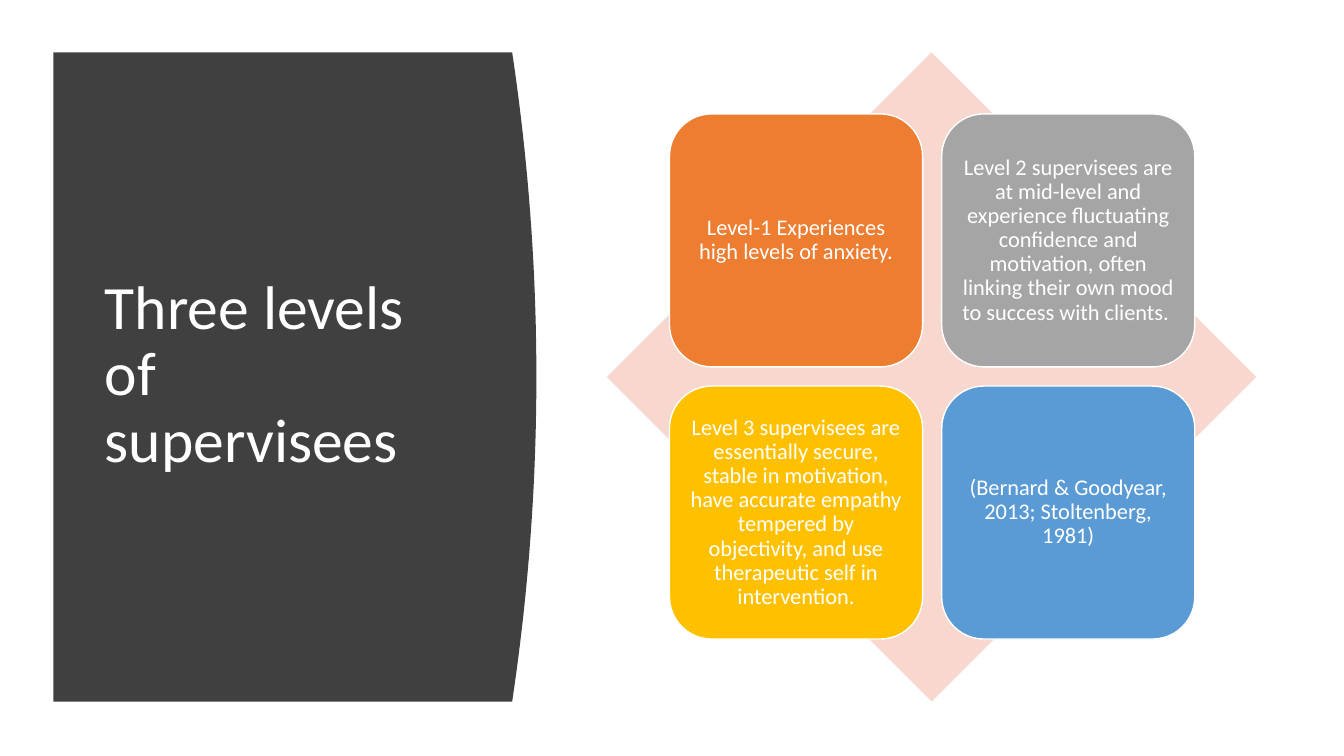
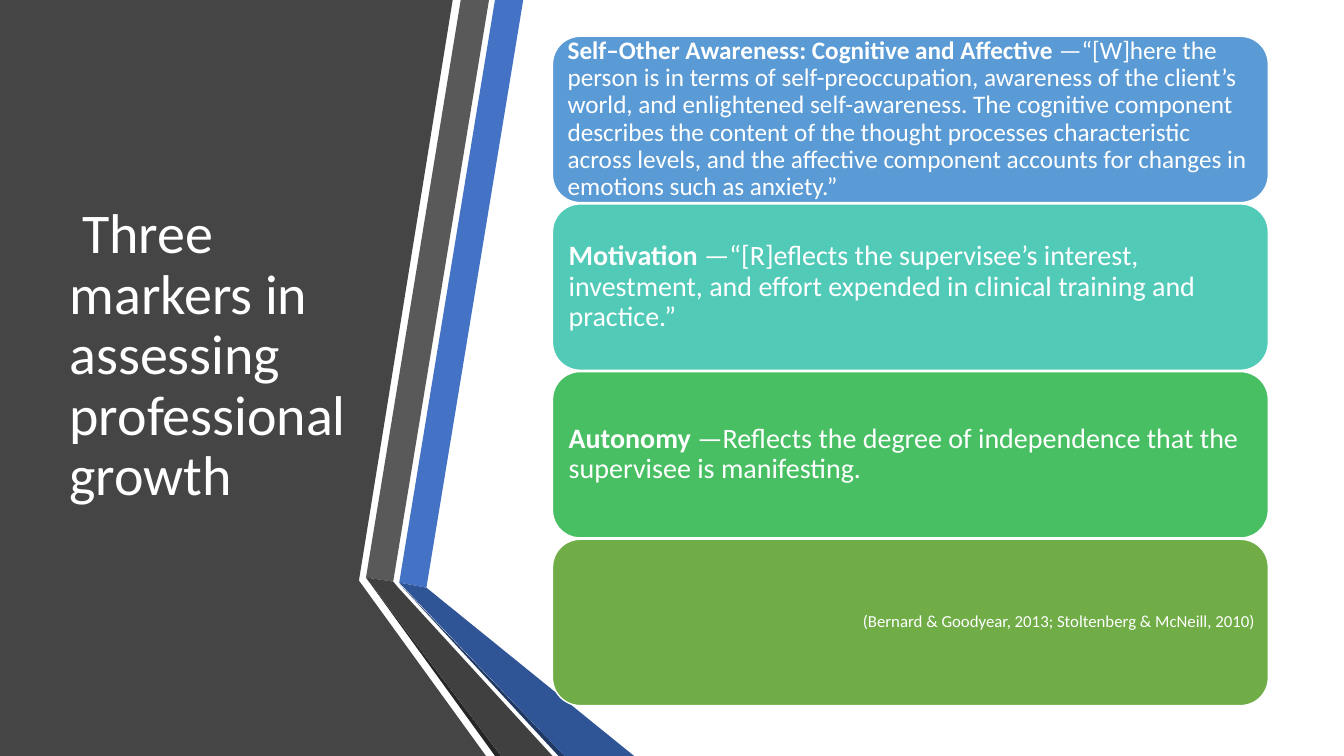
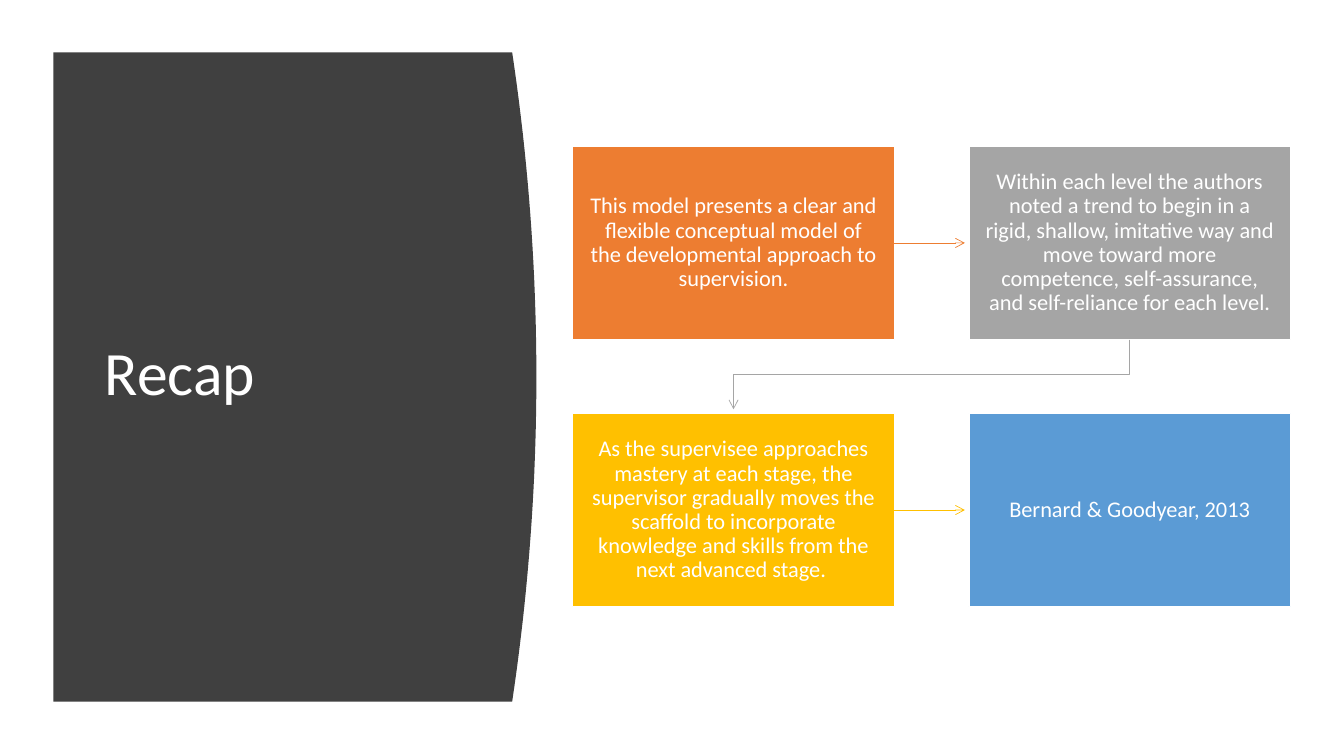
from pptx import Presentation
from pptx.dml.color import RGBColor
from pptx.enum.shapes import MSO_CONNECTOR, MSO_SHAPE
from pptx.enum.text import MSO_ANCHOR, MSO_AUTO_SIZE, PP_ALIGN
from pptx.oxml.ns import qn
from pptx.util import Inches, Pt
from lxml.etree import SubElement

# Shared style
FONT = "Calibri"
WHITE, DARK = "FFFFFF", "404040"
HUES = ["ED7D31", "A5A5A5", "FFC000", "5B9BD5"]
LEFT, MID, RIGHT = PP_ALIGN.LEFT, PP_ALIGN.CENTER, PP_ALIGN.RIGHT

# Content: text is a list of (words, bold) runs
LEVELS = [
    "Level-1 Experiences high levels of anxiety.",
    "Level 2 supervisees are at mid-level and experience fluctuating "
    "confidence and motivation, often linking their own mood to success "
    "with clients. ",
    "Level 3 supervisees are essentially secure, stable in motivation, have "
    "accurate empathy tempered by objectivity, and use therapeutic self in "
    "intervention.",
    "(Bernard & Goodyear, 2013; Stoltenberg, 1981)",
]
RECAP = [
    "This model presents a clear and flexible conceptual model of the "
    "developmental approach to supervision.",
    "Within each level the authors noted a trend to begin in a rigid, "
    "shallow, imitative way and move toward more competence, "
    "self-assurance, and self-reliance for each level.",
    "As the supervisee approaches mastery at each stage, the supervisor "
    "gradually moves the scaffold to incorporate knowledge and skills from "
    "the next advanced stage. ",
    "Bernard & Goodyear, 2013",
]
# Fill, size, inset, alignment, runs
MARKERS = [
    ("5B9BD5", 18, 0.07, LEFT, [
        ("Self–Other Awareness: Cognitive and Affective ", True),
        ("—“[W]here the person is in terms of self-preoccupation, awareness "
         "of the client’s world, and enlightened self-awareness. The "
         "cognitive component describes the content of the thought "
         "processes characteristic across levels, and the affective "
         "component accounts for changes in emotions such as anxiety.”",
         False)]),
    ("52CAB8", 20, 0.08, LEFT, [
        ("Motivation ", True),
        ("—“[R]eflects the supervisee’s interest, investment, and effort "
         "expended in clinical training and practice.”", False)]),
    ("49BF64", 20, 0.08, LEFT, [
        ("Autonomy ", True),
        ("—Reflects the degree of independence that the supervisee is "
         "manifesting.", False)]),
    ("70AD47", 12, 0.05, RIGHT, [
        ("(Bernard & Goodyear, 2013; Stoltenberg & McNeill, 2010)", False)]),
]
# Folded ribbons: fill and outline points
RIBBONS = [
    ("454545", [(0, 0), (4.49, 0), (3.56, 5.76), (4.82, 7.5), (0, 7.5)]),
    ("4472C4", [(3.96, 5.78), (4.23, 5.83), (5.19, 0), (4.91, 0)]),
    ("595959", [(4.85, 0), (4.57, 0), (3.63, 5.73), (3.9, 5.77)]),
    ("262626", [(3.63, 5.73), (4.91, 7.5), (4.97, 7.5)]),
    ("203864", [(3.96, 5.79), (5.54, 7.5), (5.6, 7.5)]),
    ("2F5597", [(3.96, 5.78), (5.6, 7.5), (6.29, 7.5), (4.23, 5.83)]),
    (DARK, [(5.48, 7.5), (3.95, 5.83), (3.9, 5.77), (3.63, 5.73),
            (4.97, 7.5)]),
]


def rgb(hue):
    return RGBColor.from_string(hue)


def paint(shape, fill, line=None):
    shape.shadow.inherit = False
    shape.fill.solid()
    shape.fill.fore_color.rgb = rgb(fill)
    if line:
        shape.line.color.rgb = rgb(line)
        shape.line.width = Pt(1)
    else:
        shape.line.fill.background()


def write(frame, runs, size, align):
    frame.word_wrap = True
    frame.auto_size = MSO_AUTO_SIZE.NONE
    frame.vertical_anchor = MSO_ANCHOR.MIDDLE
    para = frame.paragraphs[0]
    para.alignment, para.line_spacing = align, 0.9
    for words, bold in runs:
        run = para.add_run()
        run.text = words
        font = run.font
        font.name, font.size, font.bold = FONT, Pt(size), bold
        font.color.rgb = rgb(WHITE)


def box(slide, kind, at, fill, runs, size, inset, align=MID):
    shape = slide.shapes.add_shape(kind, *map(Inches, at))
    paint(shape, fill, WHITE)
    frame = shape.text_frame
    frame.margin_left = frame.margin_right = Inches(inset)
    frame.margin_top = frame.margin_bottom = Inches(inset)
    write(frame, runs, size, align)


def outline(slide, fill, points):
    first, *rest = [(Inches(x), Inches(y)) for x, y in points]
    build = slide.shapes.build_freeform(*first)
    build.add_line_segments(rest, close=True)
    paint(build.convert_to_shape(), fill)


def title(slide, text, at, size):
    head = slide.shapes.title
    head.left, head.top, head.width, head.height = map(Inches, at)
    write(head.text_frame, [(text, False)], size, LEFT)
    # Bring the title in front of the dark panel
    slide.shapes._spTree.append(head._element)


def panel(slide, text):
    top, low, edge, bulge = 0.52, 6.96, 5.08, 0.24
    steps = 40
    curve = []
    for i in range(steps + 1):
        t = i / steps
        curve.append((edge + bulge * 4 * t * (1 - t), top + (low - top) * t))
    outline(slide, DARK, [(0.53, top), *curve, (0.53, low)])
    title(slide, text, (0.94, 1.11, 3.74, 5.24), 44)


def grid(left, top, wide, high, dx, dy):
    return [(left + c * dx, top + r * dy, wide, high)
            for r in range(2) for c in range(2)]


def arrow(slide, kind, ends, hue):
    link = slide.shapes.add_connector(kind, *map(Inches, ends))
    link.line.color.rgb = rgb(hue)
    link.line.width = Pt(0.5)
    SubElement(link.line._get_or_add_ln(), qn("a:tailEnd"), type="arrow")
    SubElement(link._element.spPr, qn("a:effectLst"))
    return link


def levels(slide):
    panel(slide, "Three levels of supervisees")
    back = slide.shapes.add_shape(
        MSO_SHAPE.DIAMOND, *map(Inches, (6.02, 0.52, 6.44, 6.44)))
    paint(back, "F8D7CE")
    cells = grid(6.64, 1.13, 2.51, 2.51, 2.7, 2.7)
    for at, hue, text in zip(cells, HUES, LEVELS):
        box(slide, MSO_SHAPE.ROUNDED_RECTANGLE, at, hue,
            [(text, False)], 16, 0.07)


def markers(slide):
    for fill, points in RIBBONS:
        outline(slide, fill, points)
    title(slide, " Three markers in assessing professional growth",
          (0.59, 0.75, 3.04, 5.58), 40)
    top, step = 0.36, 4.99 / 3
    for i, (fill, size, inset, align, runs) in enumerate(MARKERS):
        box(slide, MSO_SHAPE.ROUNDED_RECTANGLE,
            (5.48, top + i * step, 7.1, 1.65), fill, runs, size, inset, align)


def recap(slide):
    panel(slide, "Recap")
    wide, high, gap = 3.19, 1.92, 0.04
    cells = grid(5.68, 1.45, wide, high, 3.93, 2.65)
    for at, hue, text in zip(cells, HUES, RECAP):
        box(slide, MSO_SHAPE.RECTANGLE, at, hue, [(text, False)], 16, 0.16)
    # Arrows along each row
    for i in (0, 2):
        x, y = cells[i][0] + wide, cells[i][1] + high / 2
        arrow(slide, MSO_CONNECTOR.STRAIGHT,
              (x, y, cells[i + 1][0] - gap, y), HUES[i])
    # Elbow from second box to third: a quarter turn about its centre
    x1, y1 = cells[1][0] + wide / 2, cells[1][1] + high
    x2, y2 = cells[2][0] + wide / 2, cells[2][1] - gap
    cx, cy = (x1 + x2) / 2, (y1 + y2) / 2
    dx, dy = (y2 - y1) / 2, (x1 - x2) / 2
    link = arrow(slide, MSO_CONNECTOR.ELBOW,
                 (cx - dx, cy - dy, cx + dx, cy + dy), HUES[1])
    link._element.spPr.find(qn("a:xfrm")).set("rot", "5400000")


def main():
    deck = Presentation()
    deck.slide_width, deck.slide_height = Inches(13.33), Inches(7.5)
    for fill in (levels, markers, recap):
        fill(deck.slides.add_slide(deck.slide_layouts[5]))
    deck.save("out.pptx")


if __name__ == "__main__":
    main()
